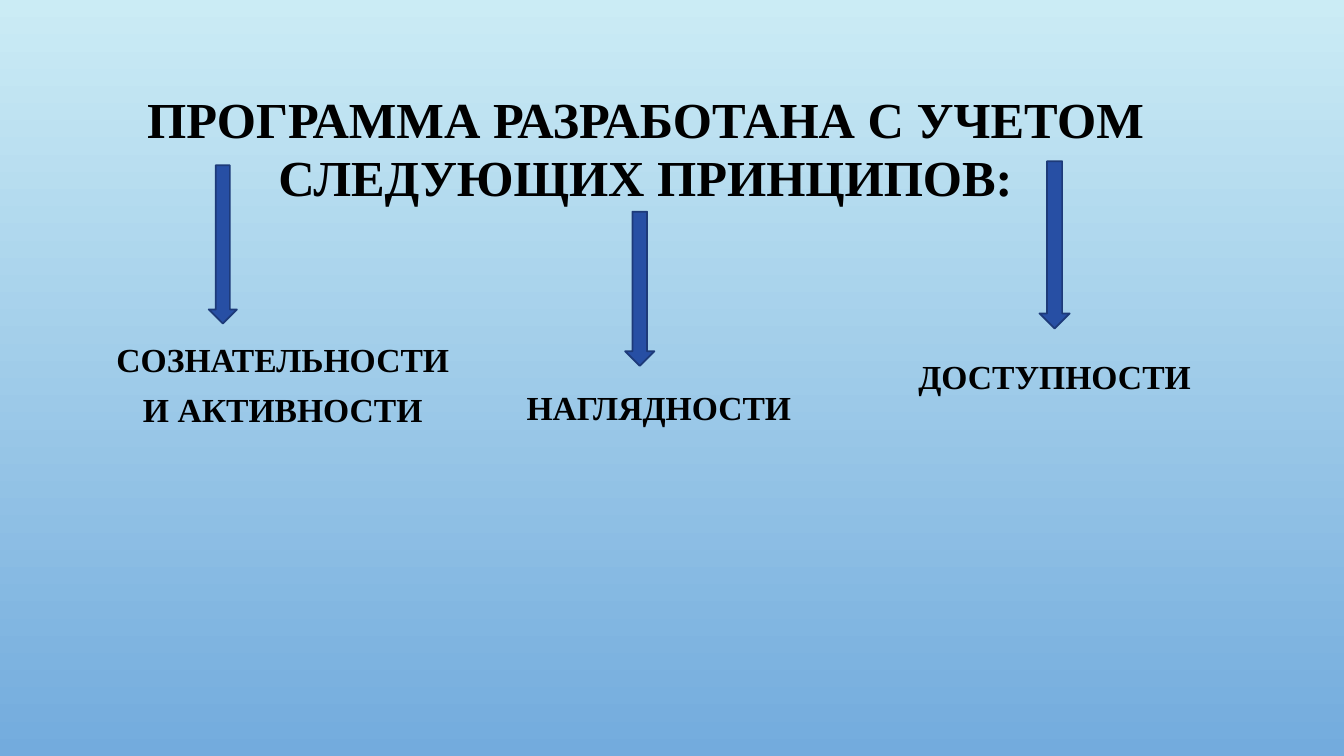
"""Build the slide about the principles behind the programme."""
import pptx
import pptx.dml.color
import pptx.enum.shapes
import pptx.enum.text
import pptx.util

Inches, Pt = pptx.util.Inches, pptx.util.Pt

TITLE = "ПРОГРАММА РАЗРАБОТАНА С УЧЕТОМ СЛЕДУЮЩИХ ПРИНЦИПОВ:"
PRINCIPLES = [
    {"text": "СОЗНАТЕЛЬНОСТИ И АКТИВНОСТИ",
     "label": (1, 3.22, 3.61, 3.11), "arrow": (2.07, 1.64, 0.28, 1.57)},
    {"text": "НАГЛЯДНОСТИ",
     "label": (4.73, 3.69, 3.61, 3.11), "arrow": (6.2, 2.1, 0.29, 1.53)},
    {"text": "ДОСТУПНОСТИ",
     "label": (8.47, 3.39, 3.98, 2.59), "arrow": (10.31, 1.6, 0.3, 1.66)},
]
COLORS = {"top": "CBECF5", "bottom": "73ABDD", "text": "000000",
          "arrow": "274FA4", "outline": "1D3A79"}
FONT = "Times New Roman"


def rgb(name):
    """Return the named colour."""
    return pptx.dml.color.RGBColor.from_string(COLORS[name])


def box(sizes):
    """Convert inches to lengths."""
    return [Inches(size) for size in sizes]


def write(sp, text, size, spacing, anchor):
    """Fill a shape with one centred bold paragraph."""
    tf = sp.text_frame
    tf.word_wrap = True
    tf.auto_size = pptx.enum.text.MSO_AUTO_SIZE.NONE
    tf.vertical_anchor = anchor
    p = tf.paragraphs[0]
    p.alignment = pptx.enum.text.PP_ALIGN.CENTER
    p.line_spacing = spacing
    p.space_before = Pt(0)
    r = p.add_run()
    r.text = text
    r.font.name = FONT
    r.font.size = Pt(size)
    r.font.bold = True
    r.font.color.rgb = rgb("text")


def add_arrow(s, sizes):
    """Add a downward block arrow."""
    sp = s.shapes.add_shape(pptx.enum.shapes.MSO_SHAPE.DOWN_ARROW, *box(sizes))
    sp.shadow.inherit = False
    sp.fill.solid()
    sp.fill.fore_color.rgb = rgb("arrow")
    sp.line.color.rgb = rgb("outline")
    sp.line.width = Pt(1.25)


def main():
    """Build and save the slide."""
    prs = pptx.Presentation()
    prs.slide_width, prs.slide_height = box((13.33, 7.5))
    s = prs.slides.add_slide(prs.slide_layouts[5])

    fill = s.background.fill
    fill.gradient()
    fill.gradient_angle = 270
    for stop, name in zip(fill.gradient_stops, ("top", "bottom")):
        stop.color.rgb = rgb(name)

    title = s.shapes.title
    title.left, title.top, title.width, title.height = box((0.74, 0.61, 11.33, 1.76))
    write(title, TITLE, 36, 0.95, pptx.enum.text.MSO_ANCHOR.MIDDLE)

    for principle in PRINCIPLES:
        label = s.shapes.add_textbox(*box(principle["label"]))
        write(label, principle["text"], 24, 1.24, pptx.enum.text.MSO_ANCHOR.TOP)
        add_arrow(s, principle["arrow"])

    prs.save("out.pptx")


if __name__ == "__main__":
    main()
